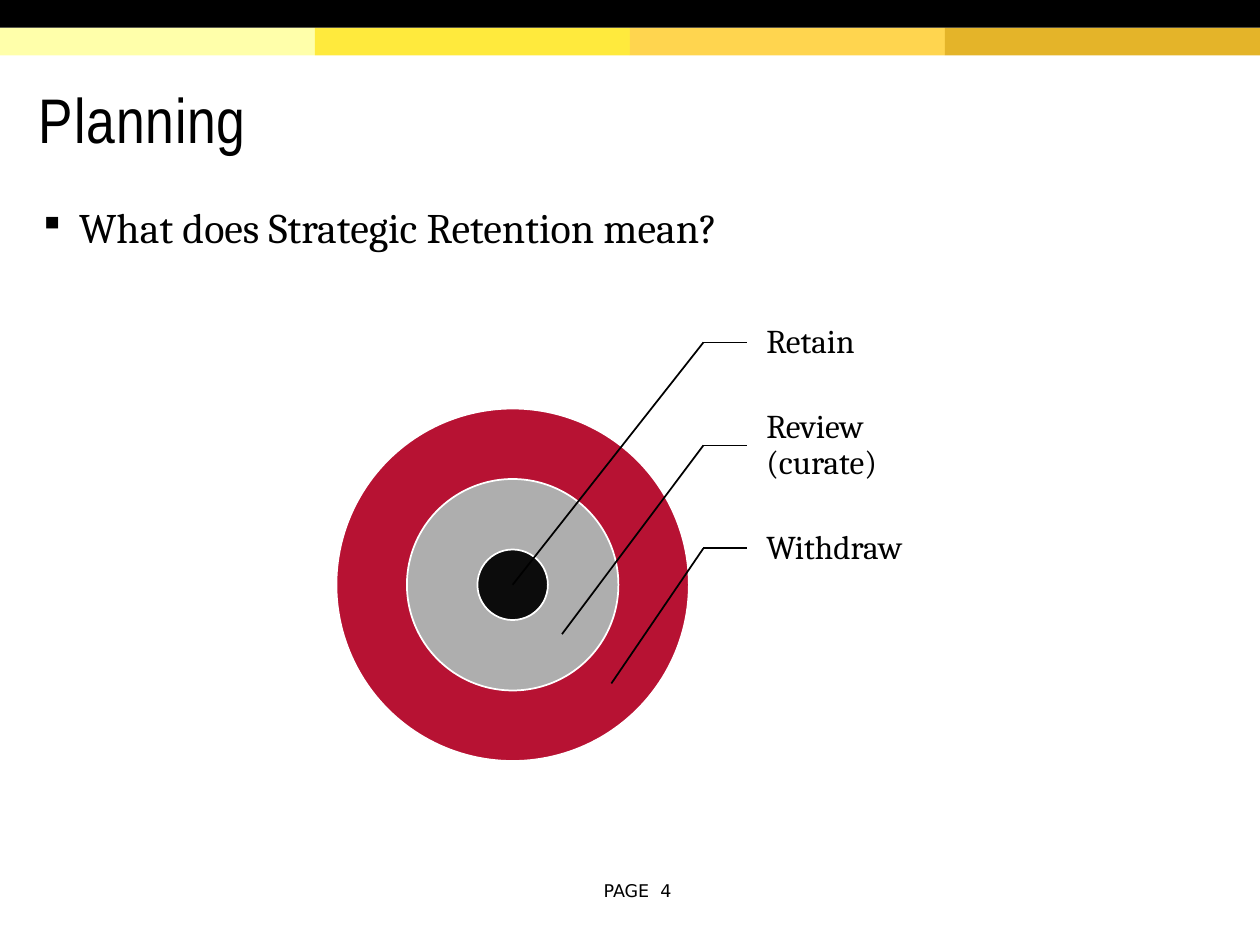
from collections import namedtuple
from lxml import etree
from pptx import Presentation, util as u
from pptx.dml.color import RGBColor
from pptx.enum import shapes, text
from pptx.oxml.ns import qn

Box = namedtuple("Box", "left top width height")
COLORS = {
    "ink": "000000", "paper": "FFFFFF",
    "bands": ["FFFFAA", "FFEA3D", "FFD54F", "E4B429"],
    "rings": ["B71233", "AEAEAE", "0C0C0C"],
}
LABELS = ["Retain", "Review (curate)", "Withdraw"]
TITLE = {"name": "Arial Narrow", "size": u.Pt(36)}
BODY = {"name": "Cambria", "size": u.Pt(24)}
LABEL = {"name": "Cambria", "size": u.Pt(19)}
FOOTER = {"name": "DejaVu Sans", "size": u.Pt(10)}


def inches(*lengths):
    return [u.Inches(length) for length in lengths]


def set_values(target, values):
    for attribute, value in values.items():
        setattr(target, attribute, value)


def paint(slide, kind, box, color, outline=None):
    part = slide.shapes.add_shape(kind, *inches(*box))
    part.shadow.inherit = False
    part.fill.solid()
    part.fill.fore_color.rgb = RGBColor.from_string(color)
    if outline:
        part.line.color.rgb = RGBColor.from_string(outline)
        part.line.width = u.Pt(1)
    else:
        part.line.fill.background()


def write(slide, box, wording, font, frame=None, paragraph=None, bullet=None):
    holder = slide.shapes.add_textbox(*inches(*box))
    set_values(holder.text_frame, {"word_wrap": True, **(frame or {})})
    line = holder.text_frame.paragraphs[0]
    set_values(line, paragraph or {})
    if bullet:
        add_bullet(line, bullet)
    run = line.add_run()
    run.text = wording
    set_values(run.font, font)
    run.font.color.rgb = RGBColor.from_string(COLORS["ink"])
    return holder, run


def add_bullet(line, mark):
    properties = line._p.get_or_add_pPr()
    indent = u.Inches(0.32)
    properties.set("marL", str(indent))
    properties.set("indent", str(-indent))
    tint = etree.SubElement(properties, qn("a:buClr"))
    etree.SubElement(tint, qn("a:srgbClr"), val=COLORS["ink"])
    etree.SubElement(properties, qn("a:buSzPct"), val="85000")
    etree.SubElement(properties, qn("a:buChar"), char=mark)


def draw_line(slide, start, end):
    line = slide.shapes.add_connector(
        shapes.MSO_CONNECTOR.STRAIGHT, *inches(*start, *end))
    line.line.color.rgb = RGBColor.from_string(COLORS["ink"])
    line.line.width = u.Pt(1)
    etree.SubElement(line._element.spPr, qn("a:effectLst"))
    return line


def add_banner(slide, box):
    row = box.height / 2
    column = box.width / len(COLORS["bands"])
    rectangle = shapes.MSO_SHAPE.RECTANGLE
    for index, color in enumerate(COLORS["bands"]):
        band = Box(box.left + index * column, box.top + row, column, row)
        paint(slide, rectangle, band, color)
    paint(slide, rectangle, box._replace(height=row), COLORS["ink"])


def add_title(slide, box):
    frame = {"vertical_anchor": text.MSO_ANCHOR.MIDDLE,
             "margin_top": u.Inches(0.1)}
    _, run = write(slide, box, "Planning", TITLE, frame, {"line_spacing": 0.85})
    run._r.get_or_add_rPr().set("spc", "50")


def add_question(slide, box):
    write(slide, box, "What does Strategic Retention mean?", BODY,
          paragraph={"space_after": u.Pt(8)}, bullet="▪")


def add_page_number(slide, box):
    write(slide, box, "PAGE  4", FOOTER,
          {"vertical_anchor": text.MSO_ANCHOR.MIDDLE},
          {"alignment": text.PP_ALIGN.CENTER})


def add_target(slide, box):
    size = 0.75 * box.height
    ring = size / 5
    target_top = box.top + box.height - size
    for index, color in enumerate(COLORS["rings"]):
        inset = index * ring
        diameter = size - 2 * inset
        disc = Box(box.left + inset, target_top + inset, diameter, diameter)
        paint(slide, shapes.MSO_SHAPE.OVAL, disc, color, COLORS["paper"])

    center_x, center_y = box.left + size / 2, target_top + size / 2
    label_left = box.left + 0.7 * box.width
    elbow_x = box.left + 0.625 * box.width
    row = 0.219 * box.height
    frame = {"vertical_anchor": text.MSO_ANCHOR.MIDDLE,
             "margin_left": u.Inches(0.15),
             **dict.fromkeys(("margin_right", "margin_top", "margin_bottom"),
                             u.Inches(0.03))}
    for index, wording in enumerate(LABELS):
        place = Box(label_left, box.top + index * row, 0.3 * box.width, row)
        label, _ = write(slide, place, wording, LABEL, frame,
                         {"line_spacing": 0.9})
        elbow = (elbow_x, place.top + row / 2)
        tick = draw_line(slide, elbow, (label_left, elbow[1]))
        tick.end_connect(label, 1)
        draw_line(slide, elbow, (center_x + index * 0.14 * size,
                                 center_y + index * 0.14 * size))


def main():
    deck = Presentation()
    deck.slide_width, deck.slide_height = inches(10, 7.5)
    slide = deck.slides.add_slide(deck.slide_layouts[6])
    add_banner(slide, Box(0, 0, 10, 0.44))
    add_title(slide, Box(0.21, 0.47, 9.49, 0.98))
    add_question(slide, Box(0.21, 1.55, 9.49, 5.03))
    add_page_number(slide, Box(4.58, 6.93, 0.96, 0.27))
    add_target(slide, Box(2.67, 2.31, 4.66, 3.73))
    deck.save("out.pptx")


if __name__ == "__main__":
    main()
